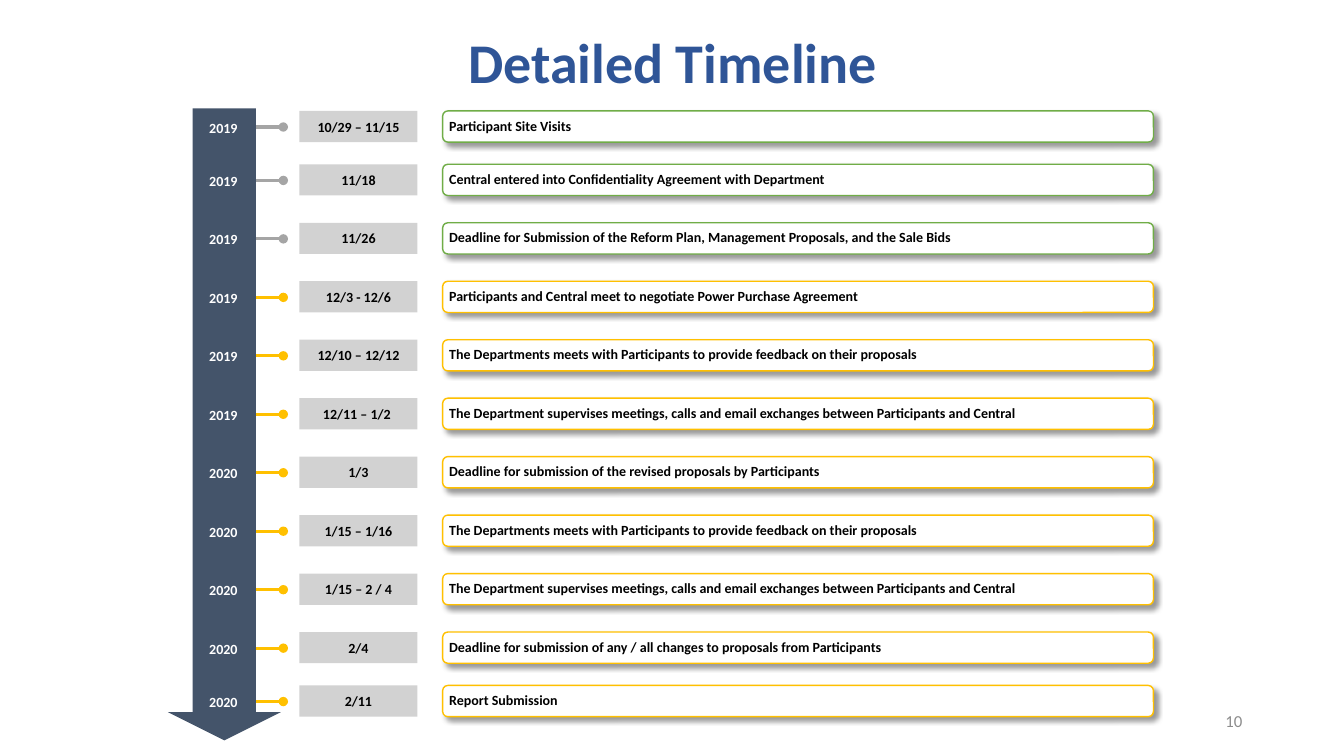
"""Build the detailed timeline slide."""
from lxml import etree
from pptx import Presentation
from pptx.dml.color import RGBColor
from pptx.enum.shapes import MSO_CONNECTOR, MSO_SHAPE
from pptx.enum.text import MSO_ANCHOR, PP_ALIGN
from pptx.oxml.ns import qn
from pptx.util import Inches, Pt

LINE = MSO_CONNECTOR.STRAIGHT
RECT = MSO_SHAPE.RECTANGLE
ROUND = MSO_SHAPE.ROUNDED_RECTANGLE
ARROW = MSO_SHAPE.RIGHT_ARROW
LEFT, CENTER, RIGHT = PP_ALIGN.LEFT, PP_ALIGN.CENTER, PP_ALIGN.RIGHT
MIDDLE = MSO_ANCHOR.MIDDLE

GREEN, GOLD, GRAY = "70AD47", "FFC000", "A5A5A5"
FEEDBACK = "The Departments meets with Participants to provide feedback on their proposals"
CALLS = ("The Department supervises meetings, calls and email exchanges "
         "between Participants and Central")
EVENTS = [
    ("2019", "10/29 – 11/15", "Participant Site Visits"),
    ("2019", "11/18", "Central entered into Confidentiality Agreement with Department"),
    ("2019", "11/26", "Deadline for Submission of the Reform Plan, "
                      "Management Proposals, and the Sale Bids"),
    ("2019", "12/3 - 12/6", "Participants and Central meet to negotiate Power Purchase Agreement"),
    ("2019", "12/10 – 12/12", FEEDBACK),
    ("2019", "12/11 – 1/2 ", CALLS),
    ("2020", "1/3", "Deadline for submission of the revised proposals by Participants"),
    ("2020", "1/15 – 1/16", FEEDBACK),
    ("2020", "1/15 – 2 / 4", CALLS),
    ("2020", "2/4", "Deadline for submission of any / all changes to proposals from Participants"),
    ("2020", "2/11", "Report Submission"),
]
DONE = 3
FIRST, LAST, START, STEP = 1.1, 6.8, 1.05, 0.58
HIGH, MID = 0.31, 0.16


def color(code):
    """Turn a hex string into a colour."""
    return RGBColor.from_string(code)


class Board:
    """Hold the style and the current slide."""

    font = "Calibri"

    def __init__(self, deck):
        """Add a slide with a title."""
        self.slide = deck.slides.add_slide(deck.slide_layouts[5])
        self.shapes = self.slide.shapes

    def letter(self, shape, text, size, ink, align, bold=True, pad=None, space=None):
        """Put one formatted line of text in a shape."""
        frame = shape.text_frame
        frame.text = text
        frame.word_wrap = True
        frame.vertical_anchor = MIDDLE
        if pad:
            frame.margin_left = frame.margin_right = Inches(pad[0])
            frame.margin_top = frame.margin_bottom = Inches(pad[1])
        line = frame.paragraphs[0]
        line.alignment = align
        if space:
            line.line_spacing = space
        font = line.runs[0].font
        font.name, font.size, font.bold = self.font, Pt(size), bold
        font.color.rgb = color(ink)

    def title(self, text, box):
        """Move and fill the title."""
        shape = self.shapes.title
        shape.left, shape.top, shape.width, shape.height = map(Inches, box)
        self.letter(shape, text, 40, "2F5597", CENTER, space=0.9)

    def label(self, text, box, *style, **more):
        """Add a text box."""
        shape = self.shapes.add_textbox(*map(Inches, box))
        self.letter(shape, text, *style, **more)

    def block(self, kind, box, fill, edge=None):
        """Add a filled shape."""
        shape = self.shapes.add_shape(kind, *map(Inches, box))
        shape.shadow.inherit = False
        shape.fill.solid()
        shape.fill.fore_color.rgb = color(fill)
        if edge:
            shape.line.color.rgb = color(edge)
            shape.line.width = Pt(1)
        else:
            shape.line.fill.background()
        return shape

    def shade(self, shape):
        """Give a shape a soft shadow."""
        effects = shape._element.spPr.find(qn("a:effectLst"))
        outer = etree.SubElement(effects, qn("a:outerShdw"), blurRad=str(Pt(4)),
                                 dist=str(Pt(3)), dir="2700000", algn="tl", rotWithShape="0")
        tint = etree.SubElement(outer, qn("a:srgbClr"), val="000000")
        etree.SubElement(tint, qn("a:alpha"), val="40000")

    def pin(self, left, right, y, ink):
        """Add a level line with a round end."""
        line = self.shapes.add_connector(LINE, *map(Inches, (left, y, right, y)))
        line.line.color.rgb = color(ink)
        line.line.width = Pt(2.25)
        props = line._element.spPr
        etree.SubElement(props.find(qn("a:ln")), qn("a:tailEnd"), type="oval")
        etree.SubElement(props, qn("a:effectLst"))

    def arrow(self, box):
        """Add the time arrow pointing down."""
        shape = self.block(ARROW, box, "44546A")
        shape.rotation = 90
        shape.adjustments[0] = 0.56
        shape.adjustments[1] = 0.25

    def event(self, top, edge, year, date, text):
        """Add the year, date and text of one event."""
        self.label(year, (1.97, top + MID - 0.08, 0.49, 0.17), 10, "FFFFFF", CENTER,
                   pad=(0.05, 0.05))
        day = self.block(RECT, (2.97, top, 1.17, HIGH), "D2D2D2")
        self.letter(day, date, 10, "000000", CENTER, pad=(0.05, 0.05))
        card = self.block(ROUND, (4.39, top, 7.05, HIGH), "FFFFFF", edge)
        self.shade(card)
        self.letter(card, text, 10, "000000", LEFT, pad=(0.05, 0.24), space=0.9)


def main():
    """Draw the slide and save it."""
    deck = Presentation()
    deck.slide_width, deck.slide_height = Inches(13.33), Inches(7.5)
    board = Board(deck)
    board.title("Detailed Timeline", (0.92, 0.06, 11.5, 1.17))
    tops = [min(max(START + STEP * i, FIRST), LAST) for i in range(len(EVENTS))]
    for i, top in enumerate(tops):
        board.pin(2.51, 2.81, top + MID, GRAY if i < DONE else GOLD)
    board.arrow((-0.91, 3.65, 6.27, 1.12))
    for i, (top, event) in enumerate(zip(tops, EVENTS)):
        board.event(top, GREEN if i < DONE else GOLD, *event)
    board.label("10", (9.42, 6.95, 3, 0.4), 12, "8C8C8C", RIGHT, bold=False)
    deck.save("out.pptx")


if __name__ == "__main__":
    main()
